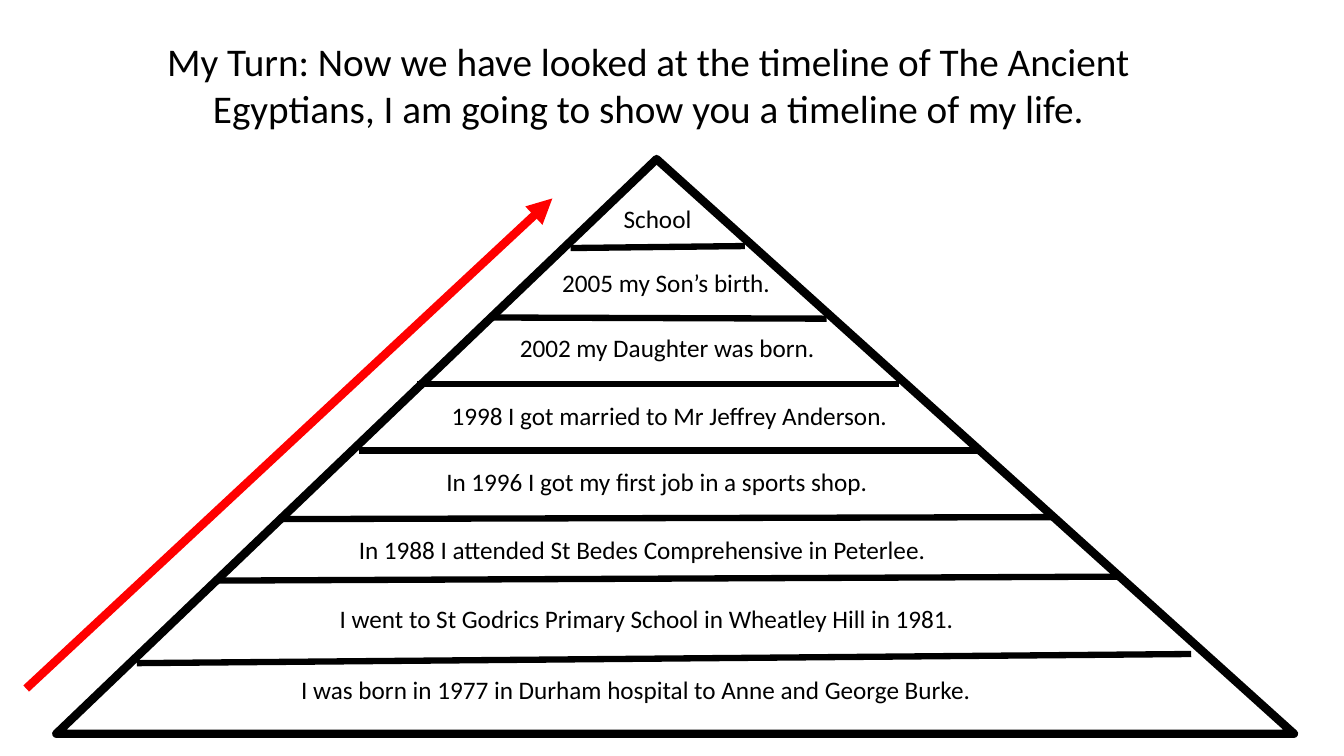
from pptx import Presentation
from pptx.dml.color import RGBColor
from pptx.enum.shapes import MSO_CONNECTOR, MSO_SHAPE
from pptx.enum.text import MSO_ANCHOR, MSO_AUTO_SIZE, PP_ALIGN
from pptx.oxml.ns import qn
from pptx.util import Cm, Pt
from lxml.etree import SubElement

COLOURS = {"ink": "000000", "paper": "FFFFFF", "arrow": "FF0000"}
FONT = "Calibri"
TITLE = ("My Turn: Now we have looked at the timeline of The Ancient "
         "Egyptians, I am going to show you a timeline of my life.")
EVENTS = [
    ("School", 14.5, 5.0, 4.14, PP_ALIGN.CENTER),
    ("2005 my Son’s birth.", 13.92, 6.6, 5.84, PP_ALIGN.LEFT),
    ("2002 my Daughter was born.", 12.85, 8.26, 7.95, PP_ALIGN.LEFT),
    ("1998 I got married to Mr Jeffrey Anderson.", 11.13, 9.96, 11.76, PP_ALIGN.LEFT),
    ("In 1996 I got my first job in a sports shop.", 8.81, 11.63, 15.49, PP_ALIGN.CENTER),
    ("In 1988 I attended St Bedes Comprehensive in Peterlee.",
     7.65, 13.34, 17.07, PP_ALIGN.CENTER),
    ("I went to St Godrics Primary School in Wheatley Hill in 1981.",
     5.72, 15.09, 21.16, PP_ALIGN.CENTER),
    ("I was born in 1977 in Durham hospital to Anne and George Burke.",
     7.34, 16.87, 19.99, PP_ALIGN.LEFT),
]
DIVIDERS = [
    (14.38, 6.25, 18.77, 6.2),
    (12.32, 8.0, 20.83, 8.03),
    (10.52, 9.68, 22.66, 9.68),
    (9.04, 11.35, 24.64, 11.35),
    (7.11, 13.08, 26.57, 13.03),
    (5.51, 14.63, 28.19, 14.53),
    (3.45, 16.71, 30.02, 16.48),
]


def colour(name):
    """Return the named colour."""
    return RGBColor.from_string(COLOURS[name])


def write(box, text, size, align):
    """Write one formatted paragraph into a box."""
    box.text_frame.word_wrap = True
    para = box.text_frame.paragraphs[0]
    para.alignment = align
    span = para.add_run()
    span.text = text
    span.font.name = FONT
    span.font.size = Pt(size)
    span.font.color.rgb = colour("ink")


def add_title(page):
    """Place and fill the title placeholder."""
    box = page.shapes.title
    box.left, box.top, box.width, box.height = Cm(2.62), Cm(0.81), Cm(27.43), Cm(2.64)
    box.text_frame.auto_size = MSO_AUTO_SIZE.NONE
    box.text_frame.vertical_anchor = MSO_ANCHOR.TOP
    write(box, TITLE, 28, PP_ALIGN.CENTER)


def add_pyramid(page):
    """Draw the outlined pyramid."""
    pyramid = page.shapes.add_shape(
        MSO_SHAPE.ISOSCELES_TRIANGLE, Cm(1.42), Cm(4.01), Cm(31.19), Cm(14.48))
    pyramid.adjustments[0] = 0.485
    pyramid.shadow.inherit = False
    pyramid.fill.solid()
    pyramid.fill.fore_color.rgb = colour("paper")
    pyramid.line.color.rgb = colour("ink")
    pyramid.line.width = Pt(6)


def add_line(page, ends, name, width):
    """Draw a straight line and return it."""
    line = page.shapes.add_connector(MSO_CONNECTOR.STRAIGHT, *map(Cm, ends))
    line.line.color.rgb = colour(name)
    line.line.width = Pt(width)
    SubElement(line._element.spPr, qn("a:effectLst"))
    return line


def add_arrow(page):
    """Draw the arrow that shows the direction of time."""
    arrow = add_line(page, (0.66, 17.35, 13.92, 5.0), "arrow", 6)
    SubElement(arrow.line._get_or_add_ln(), qn("a:tailEnd"), type="triangle")


def add_event(page, text, left, top, width, align):
    """Write one life event on its pyramid level."""
    box = page.shapes.add_textbox(Cm(left), Cm(top), Cm(width), Cm(1.02))
    box.text_frame.auto_size = MSO_AUTO_SIZE.SHAPE_TO_FIT_TEXT
    write(box, text, 18, align)


def main():
    """Build and save the slide."""
    deck = Presentation()
    deck.slide_width, deck.slide_height = Cm(33.87), Cm(19.05)
    page = deck.slides.add_slide(deck.slide_layouts[5])
    add_title(page)
    add_pyramid(page)
    for ends in DIVIDERS:
        add_line(page, ends, "ink", 4.5)
    for event in EVENTS:
        add_event(page, *event)
    add_arrow(page)
    deck.save("out.pptx")


if __name__ == "__main__":
    main()
